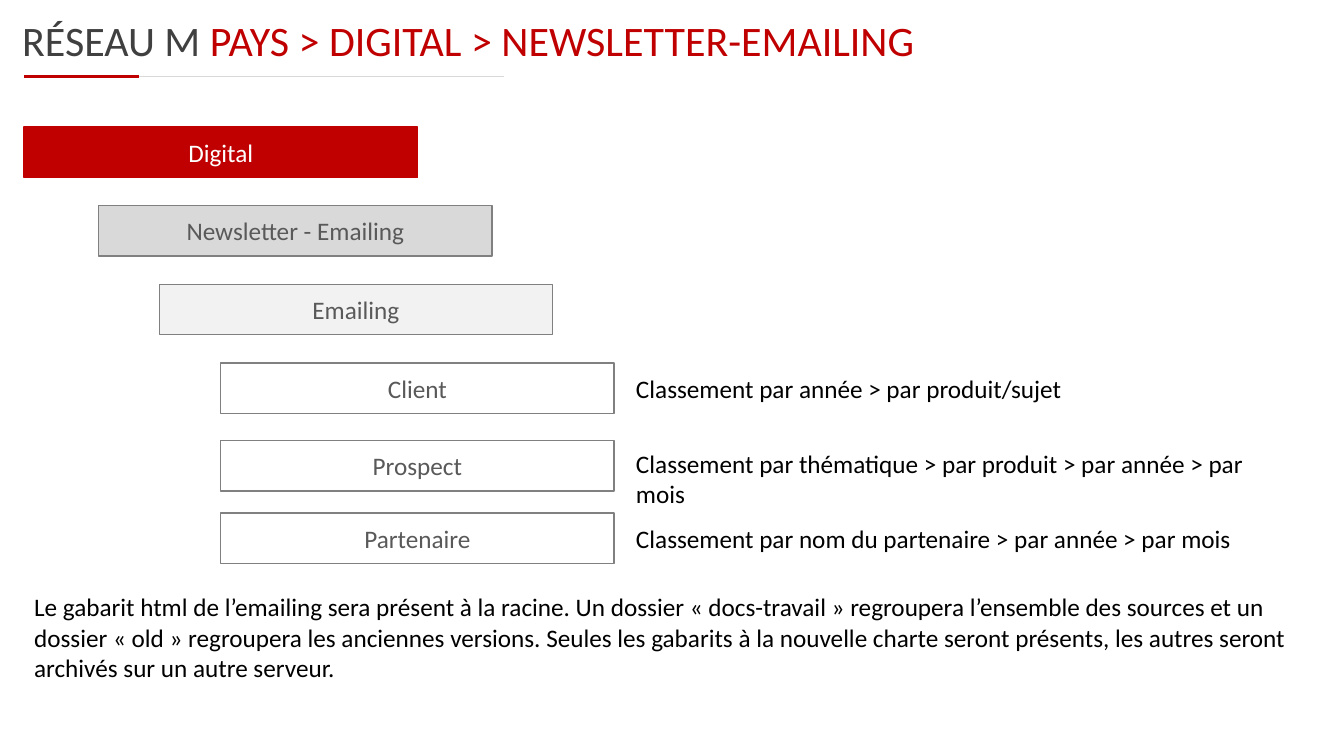
from pptx import Presentation
from pptx.dml.color import RGBColor
from pptx.enum.shapes import MSO_CONNECTOR, MSO_SHAPE
from pptx.enum.text import MSO_ANCHOR, MSO_AUTO_SIZE, PP_ALIGN
from pptx.oxml.ns import qn
from pptx.util import Inches, Pt
from lxml.etree import SubElement

RED = RGBColor(0xC0, 0x00, 0x00)
WHITE = RGBColor(0xFF, 0xFF, 0xFF)
BLACK = RGBColor(0x00, 0x00, 0x00)
CHARCOAL = RGBColor(0x40, 0x40, 0x40)
DARK_GREY = RGBColor(0x59, 0x59, 0x59)
MID_GREY = RGBColor(0x80, 0x80, 0x80)
LIGHT_GREY = RGBColor(0xD9, 0xD9, 0xD9)
PALE_GREY = RGBColor(0xF2, 0xF2, 0xF2)


def add_span(para, text, size, color):
    span = para.add_run()
    span.text = text
    for name, value in {"name": "Calibri", "size": Pt(size)}.items():
        setattr(span.font, name, value)
    span.font.color.rgb = color


deck = Presentation()
deck.slide_width = Inches(13.33)
deck.slide_height = Inches(7.5)
page = deck.slides.add_slide(deck.slide_layouts[5])

# Title and its two-tone rule
title = page.shapes.title
title_place = {"left": 0.12, "top": 0.09, "width": 13.21, "height": 1.49}
for name, value in title_place.items():
    setattr(title, name, Inches(value))
frame = title.text_frame
frame.auto_size = MSO_AUTO_SIZE.NONE
frame.vertical_anchor = MSO_ANCHOR.TOP
para = frame.paragraphs[0]
para.alignment = PP_ALIGN.LEFT
add_span(para, "RÉSEAU M ", 30, CHARCOAL)
add_span(para, "PAYS > DIGITAL > NEWSLETTER-EMAILING", 30, RED)

for start, end, color, weight in [(1.38, 5, LIGHT_GREY, 0.25), (0.24, 1.38, RED, 2.5)]:
    rule = page.shapes.add_connector(
        MSO_CONNECTOR.STRAIGHT, Inches(start), Inches(0.76), Inches(end), Inches(0.76))
    rule.line.color.rgb = color
    rule.line.width = Pt(weight)
    SubElement(rule._element.spPr, qn("a:effectLst"))

# Folder tree: label, left, top, fill, outline, text colour
folders = [
    ("Digital", 0.24, 1.26, RED, RED, WHITE),
    ("Newsletter - Emailing", 0.98, 2.04, LIGHT_GREY, MID_GREY, DARK_GREY),
    ("Emailing", 1.58, 2.82, PALE_GREY, MID_GREY, DARK_GREY),
    ("Client", 2.19, 3.6, WHITE, MID_GREY, DARK_GREY),
    ("Prospect", 2.19, 4.37, WHITE, MID_GREY, DARK_GREY),
    ("Partenaire", 2.19, 5.09, WHITE, MID_GREY, DARK_GREY),
]
for label, left, top, fill, outline, color in folders:
    box = page.shapes.add_shape(
        MSO_SHAPE.RECTANGLE, Inches(left), Inches(top), Inches(3.9), Inches(0.5))
    box.shadow.inherit = False
    box.fill.solid()
    box.fill.fore_color.rgb = fill
    box.line.color.rgb = outline
    box.line.width = Pt(1)
    box.text_frame.vertical_anchor = MSO_ANCHOR.MIDDLE
    para = box.text_frame.paragraphs[0]
    para.alignment = PP_ALIGN.CENTER
    add_span(para, label, 18, color)

# Filing rules beside the folders, then the general remark
notes = [
    ("Classement par année > par produit/sujet", 6.21, 3.65, 6.73, 0.4),
    ("Classement par thématique > par produit > par année > par mois", 6.21, 4.4, 6.73, 0.71),
    ("Classement par nom du partenaire > par année > par mois", 6.21, 5.14, 6.73, 0.4),
    ("Le gabarit html de l’emailing sera présent à la racine. "
     "Un dossier « docs-travail » regroupera l’ensemble des sources "
     "et un dossier « old » regroupera les anciennes versions. "
     "Seules les gabarits à la nouvelle charte seront présents, "
     "les autres seront archivés sur un autre serveur.", 0.24, 5.82, 12.87, 1.01),
]
for text, *place in notes:
    box = page.shapes.add_textbox(*[Inches(value) for value in place])
    box.text_frame.word_wrap = True
    box.text_frame.auto_size = MSO_AUTO_SIZE.SHAPE_TO_FIT_TEXT
    add_span(box.text_frame.paragraphs[0], text, 18, BLACK)

deck.save("out.pptx")
